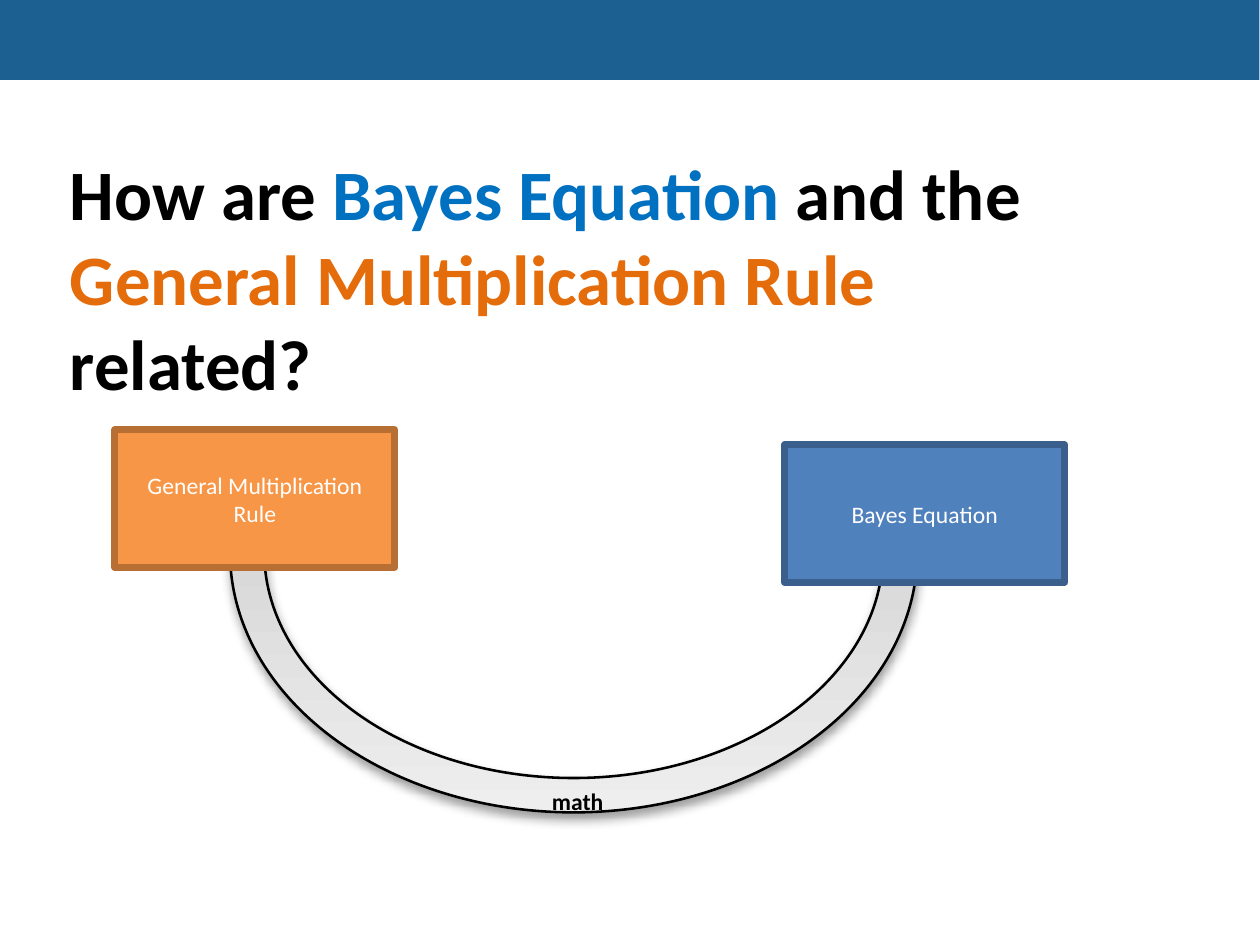
"""Build the slide linking Bayes Equation and the General Multiplication Rule."""
from lxml import etree
from pptx import Presentation, util as u
from pptx.dml.color import RGBColor
from pptx.enum import shapes, text
from pptx.oxml import parse_xml
from pptx.oxml.ns import nsdecls, qn

BLACK = RGBColor(0x00, 0x00, 0x00)
WHITE = RGBColor(0xFF, 0xFF, 0xFF)
HEADER = RGBColor(0x1B, 0x60, 0x90)
BLUE_TEXT = RGBColor(0x00, 0x70, 0xC0)
ORANGE_TEXT = RGBColor(0xE4, 0x6C, 0x0A)
BLUE = RGBColor(0x4F, 0x81, 0xBD)
BLUE_EDGE = RGBColor(0x3A, 0x5F, 0x8C)
ORANGE = RGBColor(0xF7, 0x96, 0x46)
ORANGE_EDGE = RGBColor(0xB7, 0x6F, 0x34)
ARC_SHADES = [(0, RGBColor(0xBD, 0xBD, 0xBD)), (35, RGBColor(0xD1, 0xD1, 0xD1)),
              (100, RGBColor(0xEE, 0xEE, 0xEE))]

FONT = "Calibri"
TITLE_SIZE, LABEL_SIZE = 20.4, 6.8
SLIDE_W, SLIDE_H = u.Pt(363), u.Pt(272.5)
HEADER_W, HEADER_H = 5.04, 0.32
CONCEPT_W, CONCEPT_H = 1.12, 0.55

QUESTION = [
    ("How are ", BLACK),
    ("Bayes Equation ", BLUE_TEXT),
    ("and the ", BLACK),
    ("General Multiplication Rule ", ORANGE_TEXT),
    ("related?", BLACK),
]
CONCEPTS = [
    ("Bayes Equation", 3.14, 1.78, BLUE, BLUE_EDGE),
    ("General Multiplication Rule", 0.46, 1.72, ORANGE, ORANGE_EDGE),
]
LINK = "math"


def box(left, top, width, height):
    return [u.Inches(side) for side in (left, top, width, height)]


def style(paragraph, size, color=None, bold=False):
    font = paragraph.font
    font.name, font.size, font.bold = FONT, u.Pt(size), bold
    if color is not None:
        font.color.rgb = color


def add_block(slide, preset, place, fill, edge=None, weight=0):
    block = slide.shapes.add_shape(preset, *place)
    block.shadow.inherit = False
    block.fill.solid()
    block.fill.fore_color.rgb = fill
    if edge is None:
        block.line.fill.background()
    else:
        block.line.color.rgb = edge
        block.line.width = u.Pt(weight)
    return block


def add_question(slide):
    title = slide.shapes.title
    title.left, title.top, title.width, title.height = box(0.18, 0.55, 4.08, 1.13)
    frame = title.text_frame
    frame.word_wrap = True
    frame.auto_size = text.MSO_AUTO_SIZE.NONE
    frame.vertical_anchor = text.MSO_ANCHOR.TOP
    paragraph = frame.paragraphs[0]
    paragraph.alignment = text.PP_ALIGN.LEFT
    style(paragraph, TITLE_SIZE, bold=True)
    for words, color in QUESTION:
        run = paragraph.add_run()
        run.text = words
        run.font.color.rgb = color


def add_arc(slide):
    arc = add_block(slide, shapes.MSO_SHAPE.BLOCK_ARC, box(0.92, 1.17, 2.75, 2.08),
                    WHITE, BLACK, 0.75)
    arc.rotation = 180
    for index, value in enumerate((106.673, 0.532, 0.066)):
        arc.adjustments[index] = value
    stops = "".join(f'<a:gs pos="{share * 1000}"><a:srgbClr val="{shade}"/></a:gs>'
                    for share, shade in ARC_SHADES)
    gradient = parse_xml(f'<a:gradFill {nsdecls("a")} rotWithShape="1"><a:gsLst>{stops}</a:gsLst>'
                         '<a:lin ang="16200000" scaled="1"/></a:gradFill>')
    properties = arc._element.spPr
    properties.replace(properties.find(qn("a:solidFill")), gradient)
    shadow = etree.SubElement(properties.find(qn("a:effectLst")), qn("a:outerShdw"),
                              blurRad=str(u.Pt(3.1)), dist=str(u.Pt(1.6)),
                              dir="5400000", rotWithShape="0")
    shadow.append(parse_xml(f'<a:srgbClr {nsdecls("a")} val="{BLACK}">'
                            '<a:alpha val="38000"/></a:srgbClr>'))


def add_link(slide):
    frame = slide.shapes.add_textbox(*box(2.11, 3.1, 0.7, 0.22)).text_frame
    frame.word_wrap = True
    frame.text = LINK
    style(frame.paragraphs[0], LABEL_SIZE, BLACK, bold=True)


def add_concept(slide, words, left, top, fill, edge):
    concept = add_block(slide, shapes.MSO_SHAPE.RECTANGLE,
                        box(left, top, CONCEPT_W, CONCEPT_H), fill, edge, 2)
    frame = concept.text_frame
    frame.word_wrap = True
    frame.vertical_anchor = text.MSO_ANCHOR.MIDDLE
    frame.text = words
    paragraph = frame.paragraphs[0]
    paragraph.alignment = text.PP_ALIGN.CENTER
    style(paragraph, LABEL_SIZE, WHITE)


def main():
    deck = Presentation()
    deck.slide_width, deck.slide_height = SLIDE_W, SLIDE_H
    slide = deck.slides.add_slide(deck.slide_layouts[5])
    add_block(slide, shapes.MSO_SHAPE.RECTANGLE, box(0, 0, HEADER_W, HEADER_H), HEADER)
    add_question(slide)
    add_arc(slide)
    add_link(slide)
    for concept in CONCEPTS:
        add_concept(slide, *concept)
    deck.save("out.pptx")


if __name__ == "__main__":
    main()
